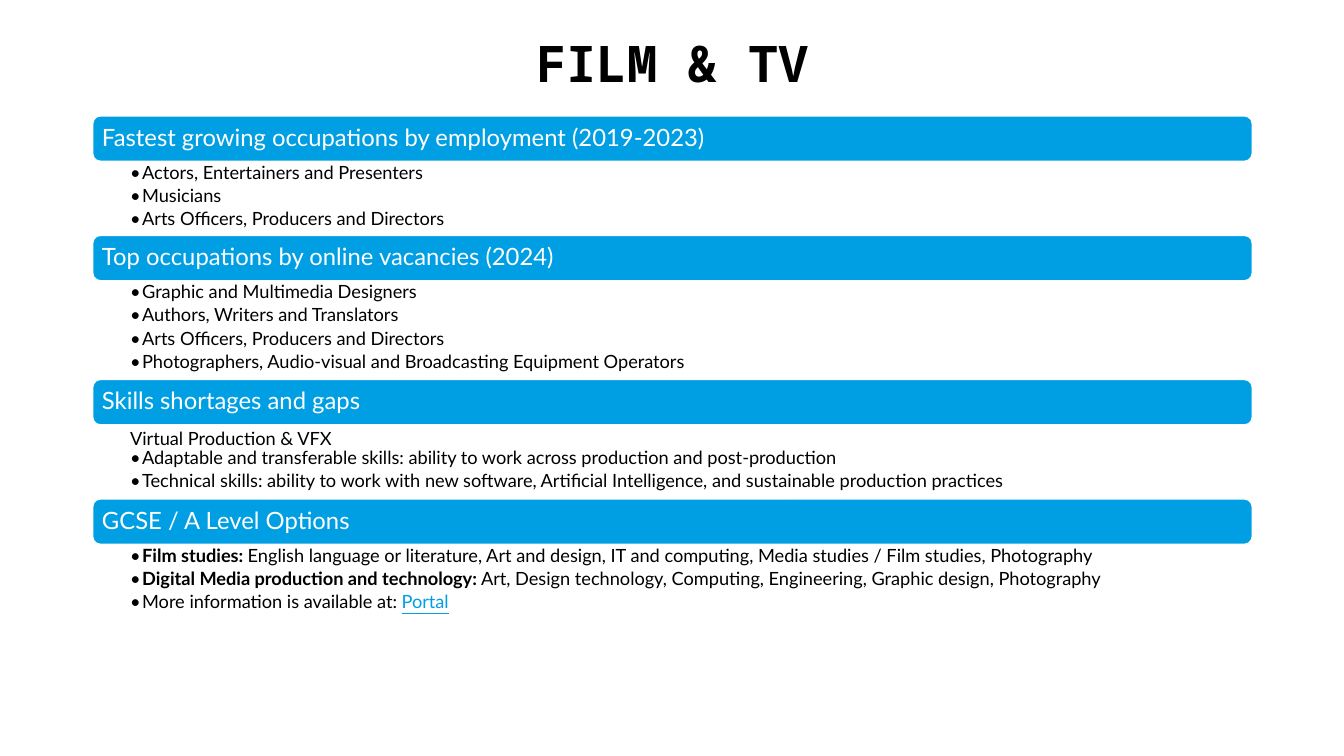
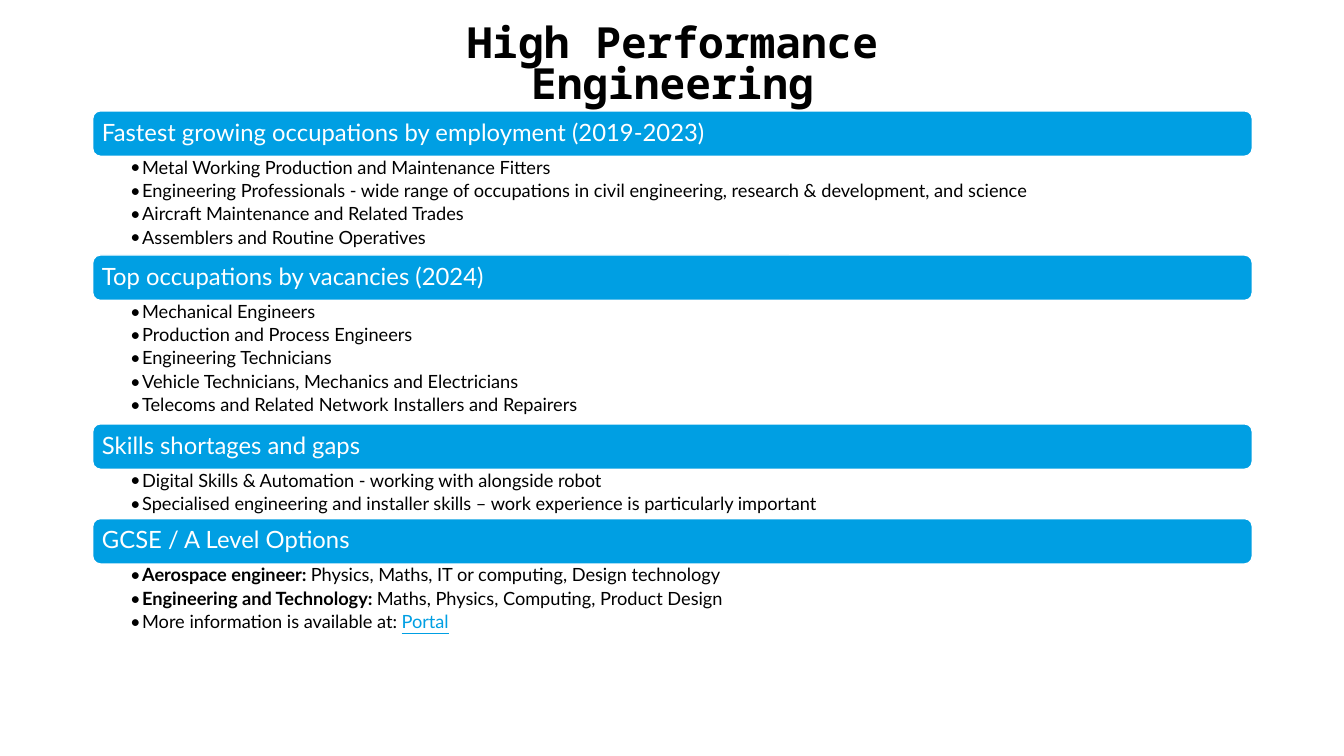
from lxml.etree import SubElement
from pptx import Presentation
from pptx.dml.color import RGBColor
from pptx.enum.shapes import MSO_SHAPE as Shape
from pptx.enum.text import MSO_ANCHOR as Anchor, PP_ALIGN as Align
from pptx.oxml.ns import qn
from pptx.util import Inches, Pt

BLUE = RGBColor(0x00, 0x9F, 0xE3)
WHITE = RGBColor(0xFF, 0xFF, 0xFF)
BLACK = RGBColor(0x00, 0x00, 0x00)
BODY_FONT = "Lato"
TITLE_FONT = "Noto Sans Mono"

LEFT, WIDTH = Inches(0.92), Inches(11.5)
BAND_HEIGHT = Inches(0.45)
TWO_ROWS = Inches(0.49)
BULLET_INDENT = Inches(0.12)

PLAIN, BOLD, LINK, LEAD = "plain", "bold", "link", "lead"
MORE_INFORMATION = [("More information is available at: ", PLAIN), ("Portal", LINK)]

FILM = [
    ("Fastest growing occupations by employment (2019-2023)", [
        "Actors, Entertainers and Presenters",
        "Musicians",
        "Arts Officers, Producers and Directors",
    ]),
    ("Top occupations by online vacancies (2024)", [
        "Graphic and Multimedia Designers",
        "Authors, Writers and Translators",
        "Arts Officers, Producers and Directors",
        "Photographers, Audio-visual and Broadcasting Equipment Operators",
    ]),
    ("Skills shortages and gaps", [
        [("Virtual Production & VFX", LEAD)],
        "Adaptable and transferable skills: ability to work across production and post-production",
        "Technical skills: ability to work with new software, Artificial Intelligence, "
        "and sustainable production practices",
    ]),
    ("GCSE / A Level Options", [
        [("Film studies: ", BOLD),
         ("English language or literature, Art and design, IT and computing, "
          "Media studies / Film studies, Photography", PLAIN)],
        [("Digital Media production and technology: ", BOLD),
         ("Art, Design technology, Computing, Engineering, Graphic design, Photography", PLAIN)],
        MORE_INFORMATION,
    ]),
]

ENGINEERING = [
    ("Fastest growing occupations by employment (2019-2023)", [
        "Metal Working Production and Maintenance Fitters",
        "Engineering Professionals - wide range of occupations in civil engineering, "
        "research & development, and science",
        "Aircraft Maintenance and Related Trades",
        "Assemblers and Routine Operatives",
    ]),
    ("Top occupations by vacancies (2024)", [
        "Mechanical Engineers",
        "Production and Process Engineers",
        "Engineering Technicians",
        "Vehicle Technicians, Mechanics and Electricians",
        "Telecoms and Related Network Installers and Repairers",
    ]),
    ("Skills shortages and gaps", [
        "Digital Skills & Automation - working with alongside robot",
        "Specialised engineering and installer skills – work experience is particularly important",
    ]),
    ("GCSE / A Level Options", [
        [("Aerospace engineer: ", BOLD),
         ("Physics, Maths, IT or computing, Design technology", PLAIN)],
        [("Engineering and Technology: ", BOLD),
         ("Maths, Physics, Computing, Product Design", PLAIN)],
        MORE_INFORMATION,
    ]),
]


def set_font(font, name, size, color, bold=False):
    font.name, font.size, font.bold = name, Pt(size), bold
    font.color.rgb = color


def set_insets(frame, left, top, right, bottom):
    frame.margin_left, frame.margin_top = Inches(left), Inches(top)
    frame.margin_right, frame.margin_bottom = Inches(right), Inches(bottom)


def add_title(page, text, size, line_spacing):
    box = page.shapes.add_textbox(Inches(3.82), Inches(0.26), Inches(5.7), Inches(0.8))
    frame = box.text_frame
    frame.word_wrap = True
    frame.vertical_anchor = Anchor.MIDDLE
    para = frame.paragraphs[0]
    para.text = text
    para.alignment = Align.CENTER
    para.line_spacing = line_spacing
    set_font(para.font, TITLE_FONT, size, BLACK, bold=True)


def add_band(page, top, heading):
    band = page.shapes.add_shape(Shape.ROUNDED_RECTANGLE, LEFT, top, WIDTH, BAND_HEIGHT)
    band.shadow.inherit = False
    band.fill.solid()
    band.fill.fore_color.rgb = BLUE
    band.line.color.rgb = WHITE
    band.line.width = Pt(1)
    frame = band.text_frame
    frame.vertical_anchor = Anchor.MIDDLE
    set_insets(frame, 0.07, 0.07, 0.07, 0.07)
    para = frame.paragraphs[0]
    para.text = heading
    para.alignment = Align.LEFT
    para.line_spacing = 0.9
    set_font(para.font, BODY_FONT, 17, WHITE)


def add_bullet(para):
    properties = para._p.get_or_add_pPr()
    properties.set("marL", str(BULLET_INDENT))
    properties.set("indent", str(-BULLET_INDENT))
    SubElement(properties, qn("a:buFont"), typeface=BODY_FONT)
    SubElement(properties, qn("a:buChar"), char="•")


def fill_row(para, row):
    """Write one list row, given as plain text or as (text, style) spans."""
    spans = [(row, PLAIN)] if isinstance(row, str) else row
    is_lead = spans[0][1] == LEAD
    para.line_spacing = 1.0 if is_lead else 0.9
    para.space_after = Pt(0 if is_lead else 2.6)
    if not is_lead:
        add_bullet(para)
    set_font(para.font, BODY_FONT, 13, BLACK)
    for text, style in spans:
        span = para.add_run()
        span.text = text
        if style == BOLD:
            span.font.bold = True
        elif style == LINK:
            span.font.underline = True
            span.font.color.rgb = BLUE


def add_list(page, top, height, rows):
    frame = page.shapes.add_textbox(LEFT, top, WIDTH, height).text_frame
    frame.word_wrap = True
    set_insets(frame, 0.37, 0.02, 0.13, 0.02)
    for index, row in enumerate(rows):
        fill_row(frame.add_paragraph() if index else frame.paragraphs[0], row)


def add_sector_slide(deck, title, title_size, title_spacing, top, sections):
    """Stack the sections from top down, each a band above its list."""
    page = deck.slides.add_slide(deck.slide_layouts[6])
    for heading, rows in sections:
        height = TWO_ROWS * len(rows) // 2
        add_band(page, top, heading)
        add_list(page, top + BAND_HEIGHT, height, rows)
        top += BAND_HEIGHT + height
    add_title(page, title, title_size, title_spacing)


def main():
    deck = Presentation()
    deck.slide_width, deck.slide_height = Inches(13.33), Inches(7.5)
    add_sector_slide(deck, "FILM & TV", 36, 0.9, Inches(1.15), FILM)
    add_sector_slide(deck, "High Performance Engineering", 30.6, 0.8, Inches(1.1), ENGINEERING)
    deck.save("out.pptx")


if __name__ == "__main__":
    main()
